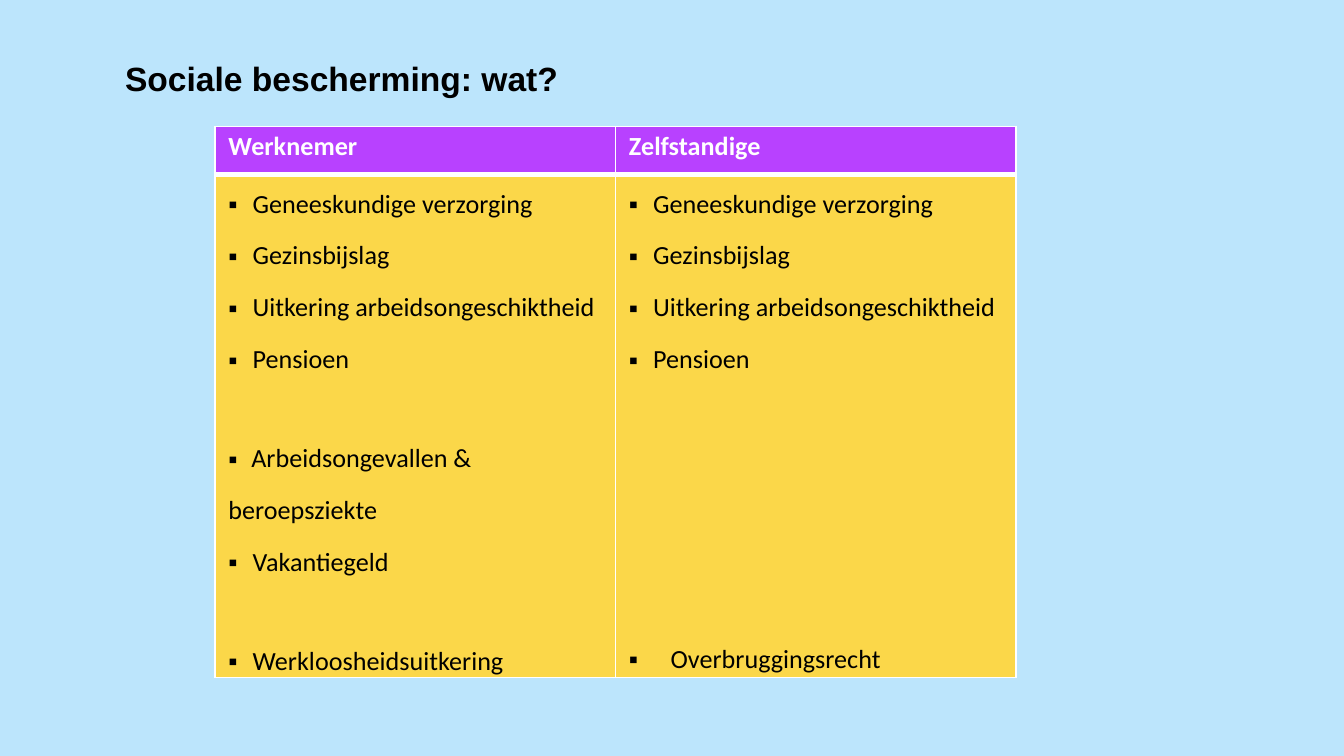
from dataclasses import dataclass

from lxml import etree
from pptx import Presentation
from pptx import util as u
from pptx.dml.color import RGBColor
from pptx.enum import text
from pptx.oxml import ns

COLORS = {
    "background": "BCE5FC",
    "header": "B841FF",
    "body": "FBD749",
    "white": "FFFFFF",
    "black": "000000",
}
LINE_GAP = 10.8
GROUP_GAP = 36


@dataclass
class Item:
    words: str
    before: float = LINE_GAP
    left: float = 0.28
    hanging: float = 0.18
    bullet: bool = True


@dataclass
class Column:
    heading: str
    items: list[Item]


SHARED = [
    Item("Geneeskundige verzorging", before=0),
    Item("Gezinsbijslag"),
    Item("Uitkering arbeidsongeschiktheid"),
    Item("Pensioen"),
]
COLUMNS = [
    Column("Werknemer", SHARED + [
        Item("Arbeidsongevallen &", GROUP_GAP, 0.27, 0.17),
        Item("beroepsziekte", left=0.1, hanging=0, bullet=False),
        Item("Vakantiegeld"),
        Item("Werkloosheidsuitkering", GROUP_GAP),
    ]),
    Column("Zelfstandige", SHARED + [
        Item("Overbruggingsrecht", 143.6, 0.41, 0.31),
    ]),
]


def rgb(color: str) -> RGBColor:
    return RGBColor.from_string(COLORS[color])


def add_child(parent, tag: str, **attributes: str):
    return etree.SubElement(parent, ns.qn(tag), **attributes)


def add_run(paragraph, words: str, font: str, size: float, color: str, bold: bool) -> None:
    run = paragraph.add_run()
    run.text = words
    run.font.name = font
    run.font.size = u.Pt(size)
    run.font.bold = bold
    run.font.color.rgb = rgb(color)


def set_indent(paragraph, left: float, hanging: float = 0):
    properties = paragraph._p.get_or_add_pPr()
    properties.set("marL", str(u.Inches(left)))
    properties.set("indent", str(-u.Inches(hanging)))
    return properties


def add_item(paragraph, item: Item) -> None:
    paragraph.space_before = u.Pt(item.before)
    properties = set_indent(paragraph, item.left, item.hanging)
    if item.bullet:
        color = add_child(properties, "a:buClr")
        add_child(color, "a:srgbClr", val=COLORS["black"])
        add_child(properties, "a:buFont", typeface="Arial")
        add_child(properties, "a:buChar", char="▪")
    add_run(paragraph, item.words, "Calibri", 14, "black", False)


def style_cell(cell, fill: str, inset: float, top: float, bottom: float) -> None:
    cell.margin_left = cell.margin_right = cell.margin_bottom = 0
    cell.margin_top = u.Inches(inset)
    cell.vertical_anchor = text.MSO_ANCHOR.TOP
    cell.fill.solid()
    cell.fill.fore_color.rgb = rgb(fill)
    properties = cell._tc.get_or_add_tcPr()
    widths = {"a:lnL": 1, "a:lnR": 1, "a:lnT": top, "a:lnB": bottom}
    for position, (tag, width) in enumerate(widths.items()):
        border = etree.Element(ns.qn(tag), w=str(u.Pt(width)))
        fill_element = add_child(border, "a:solidFill")
        add_child(fill_element, "a:srgbClr", val=COLORS["white"])
        properties.insert(position, border)


def add_title(slide, words: str) -> None:
    title = slide.shapes.add_textbox(
        u.Inches(0.79), u.Inches(0.3), u.Inches(9.32), u.Inches(0.43))
    frame = title.text_frame
    frame.word_wrap = True
    frame.margin_left = frame.margin_right = frame.margin_bottom = 0
    frame.margin_top = u.Inches(0.13)
    paragraph = frame.paragraphs[0]
    set_indent(paragraph, 0.14)
    add_run(paragraph, words, "Arial", 18, "black", True)


def add_comparison(slide, columns: list[Column]) -> None:
    table = slide.shapes.add_table(
        2, len(columns), u.Inches(1.6), u.Inches(0.94),
        u.Inches(5.96), u.Inches(4.11)).table
    for row, height in zip(table.rows, (0.36, 3.74)):
        row.height = u.Inches(height)
    for index, column in enumerate(columns):
        table.columns[index].width = u.Inches(2.98)
        header, body = table.cell(0, index), table.cell(1, index)
        style_cell(header, "header", 0.03, 1, 3)
        style_cell(body, "body", 0.1, 3, 1)
        paragraph = header.text_frame.paragraphs[0]
        set_indent(paragraph, 0.1)
        add_run(paragraph, column.heading, "Calibri", 14, "white", True)
        frame = body.text_frame
        for number, item in enumerate(column.items):
            paragraph = frame.add_paragraph() if number else frame.paragraphs[0]
            add_item(paragraph, item)


def main() -> None:
    presentation = Presentation()
    presentation.slide_width = u.Inches(10)
    presentation.slide_height = u.Inches(10 * 9 / 16)
    slide = presentation.slides.add_slide(presentation.slide_layouts[6])
    slide.background.fill.solid()
    slide.background.fill.fore_color.rgb = rgb("background")
    add_title(slide, "Sociale bescherming: wat?")
    add_comparison(slide, COLUMNS)
    presentation.save("out.pptx")


if __name__ == "__main__":
    main()
